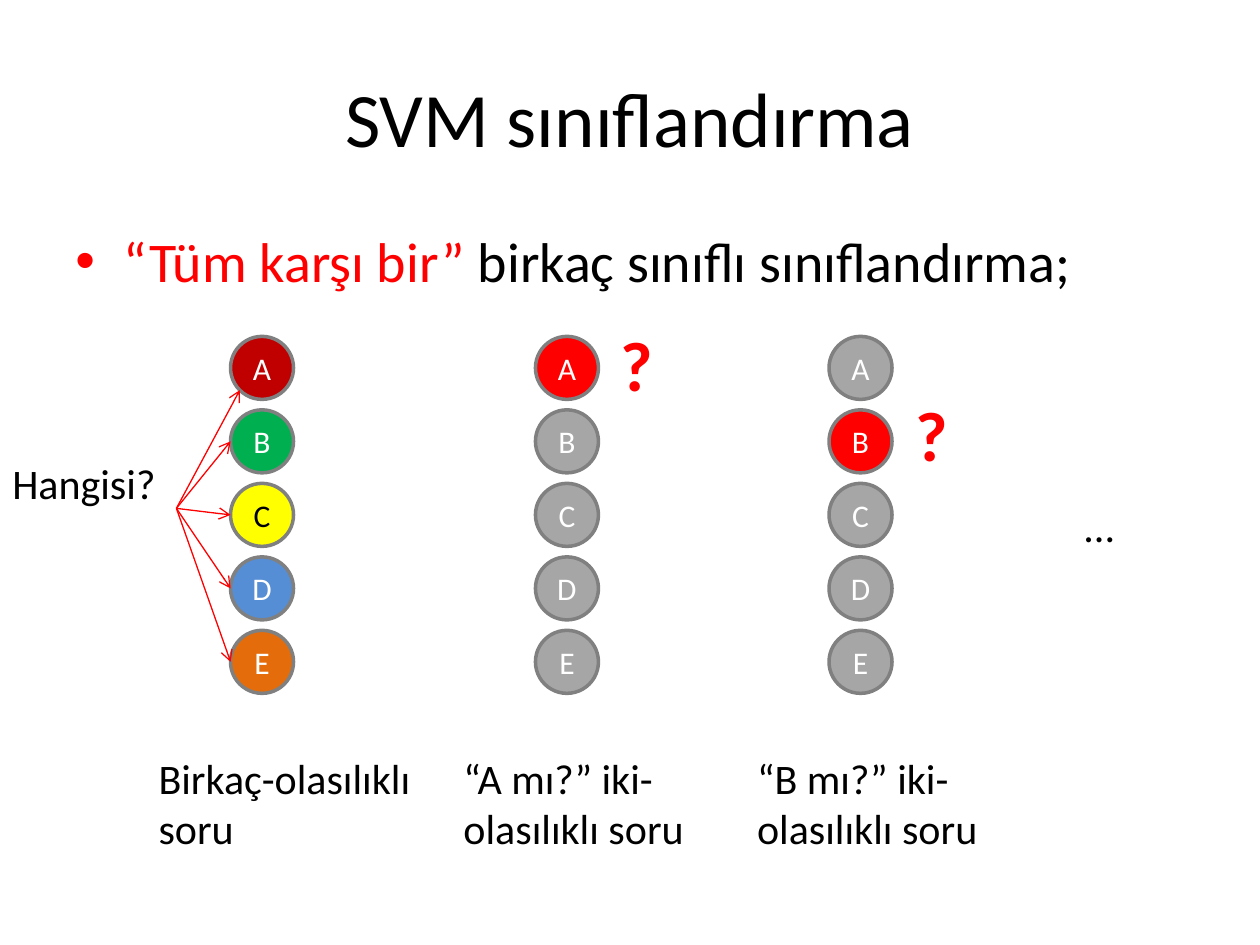
import math

from lxml import etree
from pptx import Presentation
from pptx import util as u
from pptx.dml.color import RGBColor
from pptx.enum import shapes, text
from pptx.oxml.ns import qn

COLORS = {
    "black": "000000", "white": "FFFFFF", "red": "FF0000", "outline": "808080",
    "gray": "A6A6A6", "dark red": "C00000", "green": "00B050",
    "yellow": "FFFF00", "blue": "558ED5", "orange": "E46C0A",
}
LETTERS = "ABCDE"
DIAMETER = 0.5
TOP = 2.67
STEP = 7 / 12
CHOICES_X = 1.83


def rgb(name):
    return RGBColor.from_string(COLORS[name])


class Deck:
    """Holds the text style and the slide being drawn."""

    font = "Calibri"

    def __init__(self, prs):
        self.s = prs.slides.add_slide(prs.slide_layouts[6])

    def add_text(self, p, content, color="black", **fmt):
        r = p.add_run()
        r.text = content
        for name, value in {"name": self.font, **fmt}.items():
            setattr(r.font, name, value)
        r.font.color.rgb = rgb(color)

    def box(self, at, runs, size, wrap=True, grow=True, anchor=text.MSO_ANCHOR.TOP,
            align=text.PP_ALIGN.LEFT, bold=False):
        """Add a text box; runs is a list of (content, colour) pairs."""
        sp = self.s.shapes.add_textbox(*map(u.Inches, at))
        tf = sp.text_frame
        sizing = text.MSO_AUTO_SIZE
        frame = {"word_wrap": wrap, "vertical_anchor": anchor,
                 "auto_size": sizing.SHAPE_TO_FIT_TEXT if grow else sizing.NONE}
        for name, value in frame.items():
            setattr(tf, name, value)
        p = tf.paragraphs[0]
        p.alignment = align
        for content, color in runs:
            self.add_text(p, content, color, size=u.Pt(size), bold=bold)
        return sp

    def bullet(self, sp, indent):
        p = sp.text_frame.paragraphs[0]
        p.space_before = u.Pt(6.4)
        pPr = p._p.get_or_add_pPr()
        pPr.set("marL", str(u.Inches(indent)))
        pPr.set("indent", str(-u.Inches(indent)))
        etree.SubElement(pPr, qn("a:buFont"), typeface="Arial")
        etree.SubElement(pPr, qn("a:buChar"), char="•")

    def circle(self, x, y, letter, fill, color="white"):
        sp = self.s.shapes.add_shape(
            shapes.MSO_SHAPE.OVAL, *map(u.Inches, (x, y, DIAMETER, DIAMETER)))
        sp.shadow.inherit = False
        sp.fill.solid()
        sp.fill.fore_color.rgb = rgb(fill)
        sp.line.color.rgb = rgb("outline")
        sp.line.width = u.Pt(2)
        tf = sp.text_frame
        tf.vertical_anchor = text.MSO_ANCHOR.MIDDLE
        p = tf.paragraphs[0]
        p.alignment = text.PP_ALIGN.CENTER
        self.add_text(p, letter, color, size=u.Pt(18))

    def arrow(self, source, x, y):
        """Draw an arrow from the right side of source to a point."""
        start = source.left + source.width, source.top + source.height // 2
        line = self.s.shapes.add_connector(
            shapes.MSO_CONNECTOR.STRAIGHT, *start, u.Inches(x), u.Inches(y))
        line.begin_connect(source, 3)
        line.line.color.rgb = rgb("red")
        line.line.width = u.Pt(0.75)
        ln = line._element.spPr.find(qn("a:ln"))
        etree.SubElement(ln, qn("a:tailEnd"), type="arrow")
        etree.SubElement(line._element.spPr, qn("a:effectLst"))


def main():
    prs = Presentation()
    prs.slide_width, prs.slide_height = u.Inches(10), u.Inches(7.5)
    deck = Deck(prs)

    deck.box((0.5, 0.3, 9, 1.25), [("SVM sınıflandırma", "black")], 44, grow=False,
             anchor=text.MSO_ANCHOR.MIDDLE, align=text.PP_ALIGN.CENTER)
    body = deck.box((0.5, 1.75, 9, 4.95), [("“Tüm karşı bir” ", "red"),
                    ("birkaç sınıflı sınıflandırma;", "black")], 32, grow=False)
    deck.bullet(body, 0.38)

    columns = [
        (CHOICES_X, "Birkaç-olasılıklı soru",
         ["dark red", "green", "yellow", "blue", "orange"]),
        (4.25, "“A mı?” iki- olasılıklı soru", ["red"] + ["gray"] * 4),
        (6.58, "“B mı?” iki-olasılıklı soru", ["gray", "red"] + ["gray"] * 3),
    ]
    for x, caption, fills in columns:
        for i, (letter, fill) in enumerate(zip(LETTERS, fills)):
            color = "black" if fill == "yellow" else "white"
            deck.circle(x, TOP + i * STEP, letter, fill, color)
        deck.box((x - 0.67, 5.92, 2.25, 0.91), [(caption, "black")], 24)

    deck.box((8.5, 3.92, 1.17, 0.5), [("...", "black")], 24)
    which = deck.box((0, 3.58, 1.4, 0.91), [("Hangisi?", "black")], 24)

    radius = DIAMETER / 2
    diagonal = radius * math.sqrt(0.5)
    deck.arrow(which, CHOICES_X + radius - diagonal, TOP + radius + diagonal)
    for i in range(1, len(LETTERS)):
        deck.arrow(which, CHOICES_X, TOP + i * STEP + radius)

    for x, y in [(4.83, 2.5), (7.17, 3.06)]:
        deck.box((x, y, 0.46, 0.77), [("?", "red")], 40, wrap=False, bold=True)

    prs.save("out.pptx")


if __name__ == "__main__":
    main()
